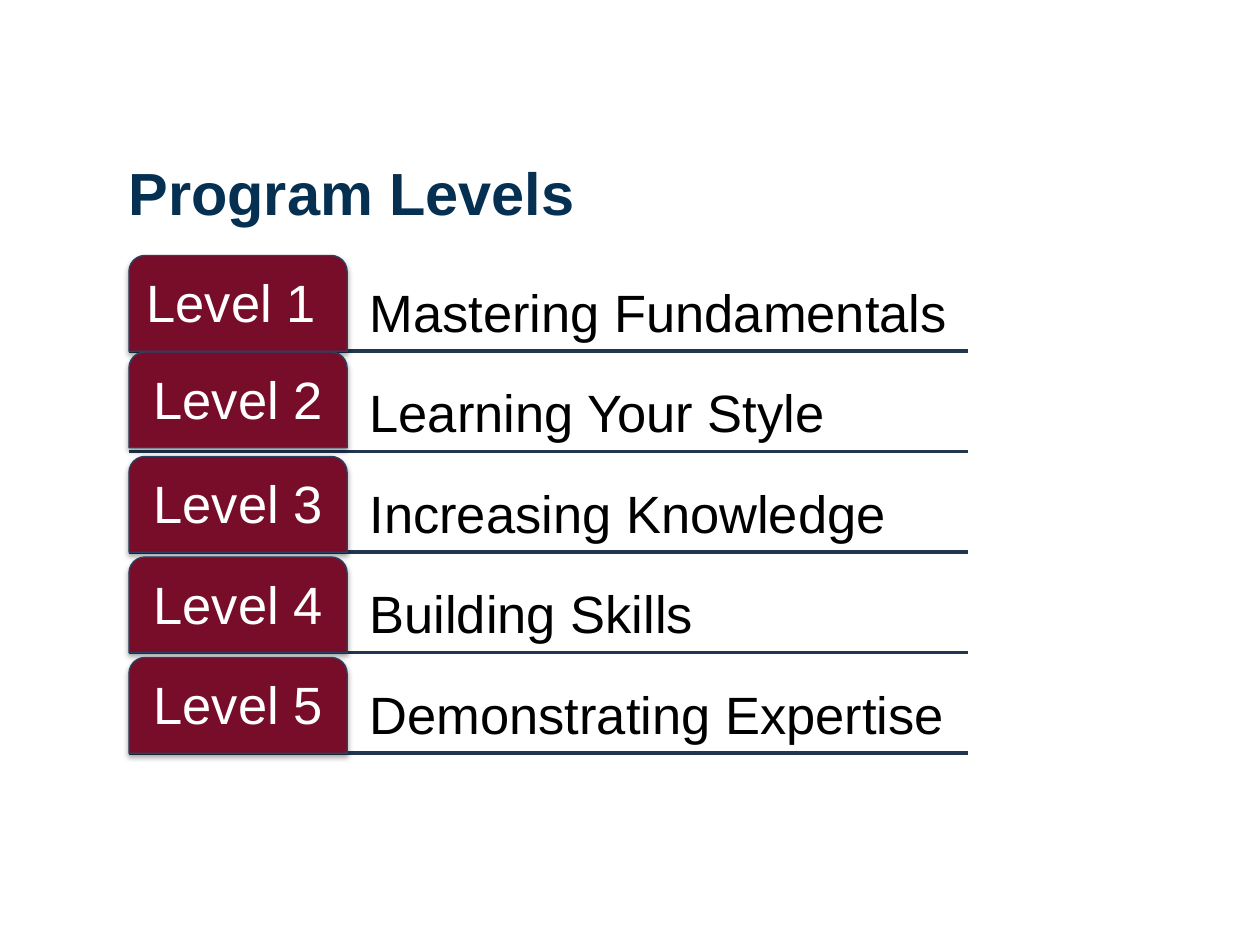
from dataclasses import dataclass

from lxml import etree
from pptx import Presentation
from pptx import util as u
from pptx.dml.color import RGBColor
from pptx.enum import shapes, text
from pptx.oxml.ns import qn

COLORS = {"title": "063052", "tab": "770D29", "edge": "294364",
          "rule": "213650", "body": "000000", "label": "FFFFFF"}
FONT = "Arial"

# Grid, in centimetres
LEFT, TOP, PITCH = 2.6, 5.15, 2.026
ROW_H, TAB_W, NAME_W = 1.93, 4.4, 12.52
LABEL_PAD, INSET, NAME_INSET = 0.1, 0.15, 0.45


@dataclass
class Level:
    label: str
    name: str
    tab_shift: float = 0      # vertical offset of the tab
    right_pad: float = 0      # extra right inset, moves the label left


LEVELS = [
    Level("Level 1", "Mastering Fundamentals", right_pad=0.28),
    Level("Level 2", "Learning Your Style", tab_shift=-0.08),
    Level("Level 3", "Increasing Knowledge"),
    Level("Level 4", "Building Skills"),
    Level("Level 5", "Demonstrating Expertise"),
]


def rgb(key: str) -> RGBColor:
    return RGBColor.from_string(COLORS[key])


def style(p, size: float, color: str, bold: bool = False) -> None:
    p.font.name, p.font.size, p.font.bold = FONT, u.Pt(size), bold
    p.font.color.rgb = rgb(color)


def add_rule(s, y: float) -> None:
    line = s.shapes.add_connector(
        shapes.MSO_CONNECTOR.STRAIGHT, u.Cm(LEFT), u.Cm(y),
        u.Cm(LEFT + TAB_W + NAME_W), u.Cm(y))
    line.line.color.rgb, line.line.width = rgb("rule"), u.Pt(2)
    etree.SubElement(line._element.spPr, qn("a:effectLst"))


def add_tab(s, y: float) -> None:
    sp = s.shapes.add_shape(
        shapes.MSO_SHAPE.ROUND_2_SAME_RECTANGLE,
        u.Cm(LEFT), u.Cm(y), u.Cm(TAB_W), u.Cm(ROW_H))
    sp.adjustments[0], sp.adjustments[1] = 0.167, 0
    sp.fill.solid()
    sp.fill.fore_color.rgb = rgb("tab")
    sp.line.color.rgb, sp.line.width = rgb("edge"), u.Pt(0.75)
    # Soft shadow straight below
    sp.shadow.inherit = False
    effects = sp._element.spPr.find(qn("a:effectLst"))
    shadow = etree.SubElement(
        effects, qn("a:outerShdw"), blurRad=str(u.Pt(3.1)),
        dist=str(u.Pt(1.8)), dir="5400000", rotWithShape="0")
    color = etree.SubElement(shadow, qn("a:srgbClr"), val="000000")
    etree.SubElement(color, qn("a:alpha"), val="35000")


def add_text(s, words: str, x: float, y: float, w: float, h: float,
             color: str, anchor, align, left: float, right: float) -> None:
    tf = s.shapes.add_textbox(u.Cm(x), u.Cm(y), u.Cm(w), u.Cm(h)).text_frame
    tf.word_wrap, tf.vertical_anchor = True, anchor
    tf.margin_left, tf.margin_right = u.Cm(left), u.Cm(right)
    tf.margin_top = tf.margin_bottom = u.Cm(INSET)
    p = tf.paragraphs[0]
    p.text, p.alignment, p.line_spacing = words, align, 0.9
    style(p, 30, color)


def add_level(s, level: Level, y: float) -> None:
    add_text(s, level.name, LEFT + TAB_W, y, NAME_W, ROW_H, "body",
             text.MSO_ANCHOR.BOTTOM, text.PP_ALIGN.LEFT, NAME_INSET, INSET)
    tab_y = y + level.tab_shift
    add_tab(s, tab_y)
    add_text(s, level.label, LEFT + LABEL_PAD, tab_y + LABEL_PAD,
             TAB_W - 2 * LABEL_PAD, ROW_H - LABEL_PAD, "label",
             text.MSO_ANCHOR.MIDDLE, text.PP_ALIGN.CENTER,
             INSET, INSET + level.right_pad)


def main() -> None:
    prs = Presentation()
    prs.slide_width, prs.slide_height = u.Cm(25.4), u.Cm(19.05)
    s = prs.slides.add_slide(prs.slide_layouts[5])

    # Title
    title = s.shapes.title
    title.left, title.top = u.Cm(2.34), u.Cm(2.29)
    title.width, title.height = u.Cm(21.39), u.Cm(3.17)
    tf = title.text_frame
    tf.vertical_anchor = text.MSO_ANCHOR.MIDDLE
    p = tf.paragraphs[0]
    p.text, p.alignment = "Program Levels", text.PP_ALIGN.LEFT
    style(p, 34, "title", bold=True)

    # Rules lie behind the tabs
    tops = [TOP + i * PITCH for i in range(len(LEVELS))]
    for y in tops:
        add_rule(s, y + ROW_H)

    # Levels
    for level, y in zip(LEVELS, tops):
        add_level(s, level, y)

    prs.save("out.pptx")


if __name__ == "__main__":
    main()
